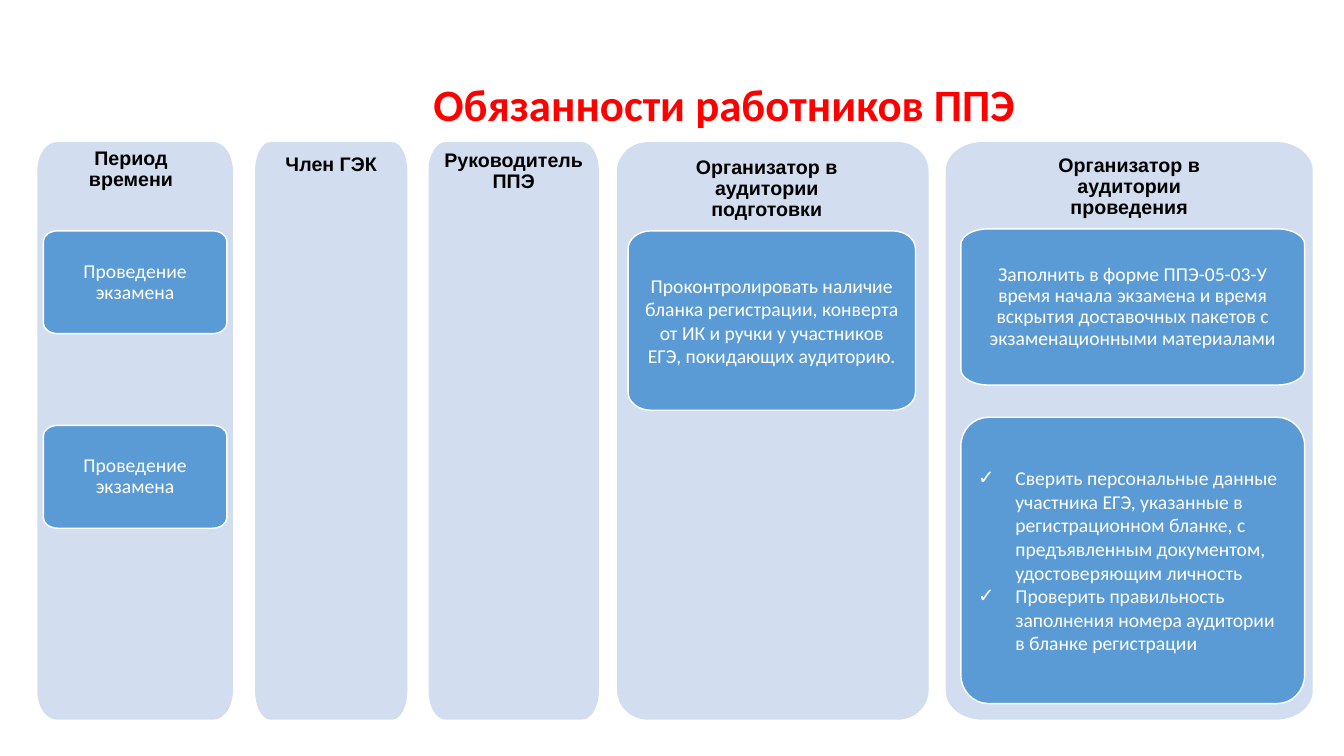
"""Build the slide on the duties of exam station staff."""
import pptx
import pptx.util
import pptx.dml.color
import pptx.enum.text
import pptx.oxml.ns
from lxml import etree

Inches = pptx.util.Inches
Pt = pptx.util.Pt
qn = pptx.oxml.ns.qn
ALIGN = pptx.enum.text.PP_ALIGN
ANCHOR = pptx.enum.text.MSO_ANCHOR

TITLE = "Обязанности работников ППЭ"
PALE, BLUE, WHITE, BLACK, RED = "D2DEEF", "5B9BD5", "FFFFFF", "000000", "FF0000"
TOP, TALL = 1.41, 5.73
COLS = [(0.37, 1.94), (2.53, 1.51), (4.25, 1.69), (6.12, 3.09), (9.38, 3.64)]
HEADS = [
    ("Период времени", (0.46, 1.41, 1.68, 0.54), True),
    ("Член ГЭК", (2.71, 1.47, 1.15, 0.33), False),
    ("Руководитель ППЭ", (4.05, 1.43, 2.09, 0.54), True),
    ("Организатор в аудитории подготовки", (6.49, 1.5, 2.23, 0.76), True),
    ("Организатор в аудитории проведения", (10.12, 1.48, 2.16, 0.76), True),
]
CARDS = [
    (["Проведение экзамена"], (0.43, 2.29, 1.82, 1.02), {"space": 0.9}),
    (["Проведение экзамена"], (0.43, 4.22, 1.82, 1.02), {"space": 0.9}),
    (["Проконтролировать наличие бланка регистрации, конверта от ИК и ручки "
      "у участников ЕГЭ, покидающих аудиторию."],
     (6.23, 2.29, 2.85, 1.78), {"pad": (0.15, 0.14)}),
    (["Заполнить в форме ППЭ-05-03-У время начала экзамена и время вскрытия "
      "доставочных пакетов с экзаменационными материалами"],
     (9.53, 2.27, 3.41, 1.55), {"space": 0.9}),
    (["Сверить персональные данные участника ЕГЭ, указанные в регистрационном "
      "бланке, с предъявленным документом, удостоверяющим личность",
      "Проверить правильность заполнения номера аудитории в бланке регистрации"],
     (9.53, 4.14, 3.41, 2.84), {"align": ALIGN.LEFT, "mark": "✓"}),
]


def paint(hue):
    return pptx.dml.color.RGBColor.from_string(hue)


def write(shape, lines, size=14, face="Calibri", hue=WHITE, bold=False,
          align=ALIGN.CENTER, space=1.0, anchor=ANCHOR.TOP, pad=(0.17, 0.14),
          wrap=True, mark=None):
    frame = shape.text_frame
    frame.word_wrap = wrap
    frame.auto_size = pptx.enum.text.MSO_AUTO_SIZE.NONE
    frame.vertical_anchor = anchor
    frame.margin_left = frame.margin_right = Inches(pad[0])
    frame.margin_top = frame.margin_bottom = Inches(pad[1])
    for i, line in enumerate(lines):
        para = frame.add_paragraph() if i else frame.paragraphs[0]
        para.alignment, para.line_spacing = align, space
        para.space_before = para.space_after = Pt(0)
        if mark:
            props = para._p.get_or_add_pPr()
            props.set("marL", str(Inches(0.37)))
            props.set("indent", str(Inches(-0.37)))
            etree.SubElement(props, qn("a:buFont")).set("typeface", "Arial")
            etree.SubElement(props, qn("a:buChar")).set("char", mark)
        run = para.add_run()
        run.text = line
        font = run.font
        font.size, font.name, font.bold = Pt(size), face, bold
        font.color.rgb = paint(hue)


def panel(slide, box, fill, bend, edge=None):
    """Draw a rectangle with elliptical corners sized as shares of its sides."""
    left, top, wide, high = map(Inches, box)
    rx, ry = int(wide * bend[0]), int(high * bend[1])
    tips = [(0, 0), (wide, 0), (wide, high), (0, high)]
    dots = [(0, ry), (rx, 0), (wide - rx, 0), (wide, ry),
            (wide, high - ry), (wide - rx, high), (rx, high), (0, high - ry)]
    pen = slide.shapes.build_freeform(*dots[0])
    pen.add_line_segments(dots[1:], close=True)
    shape = pen.convert_to_shape(left, top)
    sides = list(shape._element.iter(qn("a:lnTo")))[::2]
    for side, tip, start, end in zip(sides, tips, dots[::2], dots[1::2]):
        side.tag = qn("a:cubicBezTo")
        for i, base in enumerate((start, end)):
            point = etree.Element(qn("a:pt"))
            for name, a, b in zip("xy", base, tip):
                point.set(name, str(round(a + 0.55 * (b - a))))
            side.insert(i, point)
    shape.shadow.inherit = False
    shape.fill.solid()
    shape.fill.fore_color.rgb = paint(fill)
    if edge:
        shape.line.color.rgb = paint(edge)
        shape.line.width = Pt(1)
    else:
        shape.line.fill.background()
    return shape


def main():
    deck = pptx.Presentation()
    deck.slide_width, deck.slide_height = Inches(13.33), Inches(7.5)
    slide = deck.slides.add_slide(deck.slide_layouts[5])
    title = slide.shapes.title
    title.left, title.top = Inches(1.56), Inches(0.7)
    title.width, title.height = Inches(11.25), Inches(0.66)
    write(title, [TITLE], size=32, hue=RED, bold=True, pad=(0.12, 0.06))
    for left, wide in COLS:
        panel(slide, (left, TOP, wide, TALL), PALE, (0.1, 0.05))
    for lines, box, style in CARDS:
        card = panel(slide, box, BLUE, (0.08, 0.1), edge=WHITE)
        write(card, lines, anchor=ANCHOR.MIDDLE, **style)
    for text, box, wrap in HEADS:
        head = slide.shapes.add_textbox(*map(Inches, box))
        write(head, [text], face="Arial", hue=BLACK, bold=True, space=0.9,
              pad=(0.12, 0.06), wrap=wrap)
    deck.save("out.pptx")


if __name__ == "__main__":
    main()
